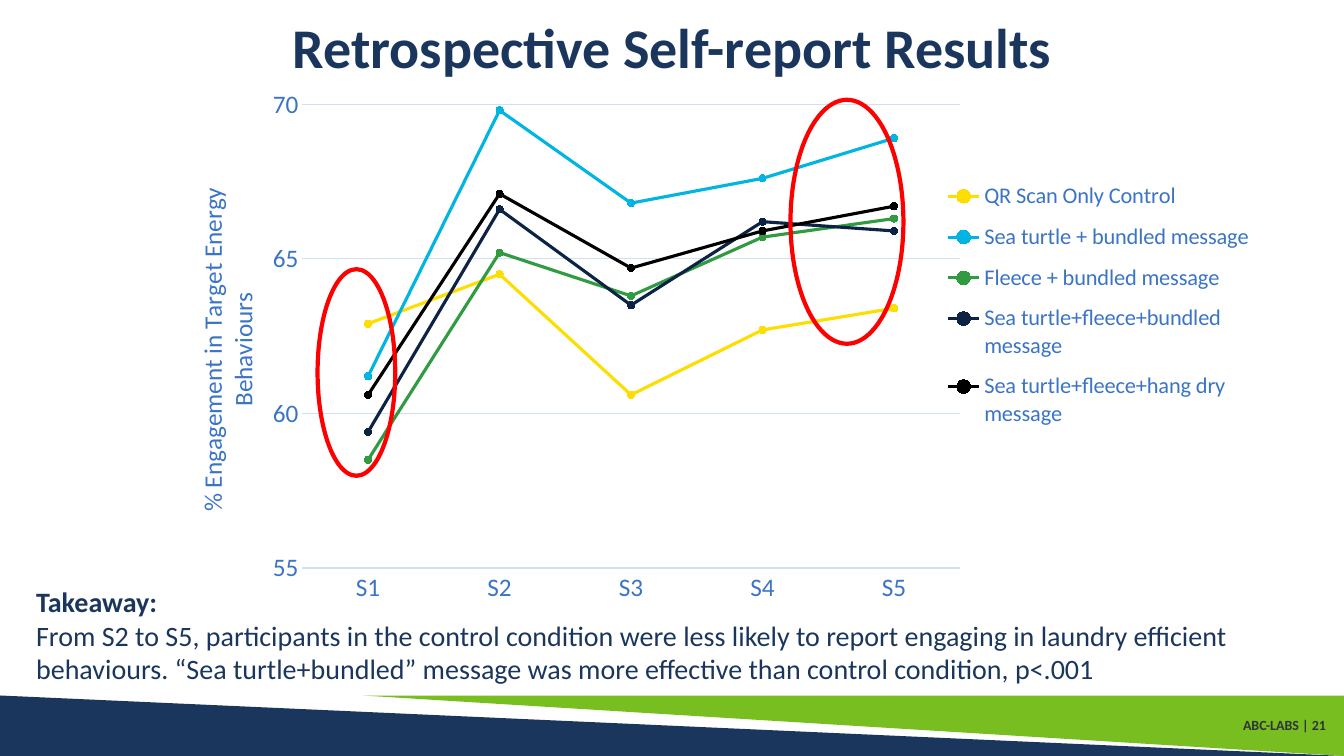
from dataclasses import dataclass

from lxml import etree
from pptx import Presentation
from pptx.chart.data import CategoryChartData
from pptx.dml.color import RGBColor
from pptx.enum.chart import (
    XL_CHART_TYPE as ChartType,
    XL_LEGEND_POSITION as LegendPosition,
    XL_MARKER_STYLE as MarkerStyle,
    XL_TICK_MARK as TickMark,
)
from pptx.enum.shapes import MSO_SHAPE as Preset
from pptx.enum.text import MSO_ANCHOR as Anchor, PP_ALIGN as Align
from pptx.oxml.ns import qn
from pptx.util import Emu, Pt

EMU_PER_PX = 9144  # 100 px to the inch


@dataclass(frozen=True)
class Theme:
    font: str = "Calibri"
    navy: str = "1B365D"
    green: str = "78BE20"
    footer: str = "2E3438"
    axis: str = "3B74C6"
    grid: str = "D2DFF2"
    highlight: str = "FF0000"
    title_size: int = 40
    body_size: int = 20
    axis_size: int = 18
    legend_size: int = 16
    footer_size: int = 10


SESSIONS = ["S1", "S2", "S3", "S4", "S5"]
CONDITIONS = [
    ("QR Scan Only Control", "FEDD00", (62.9, 64.5, 60.6, 62.7, 63.4)),
    ("Sea turtle + bundled message", "00B5E2", (61.2, 69.8, 66.8, 67.6, 68.9)),
    ("Fleece + bundled message", "319B42", (58.5, 65.2, 63.8, 65.7, 66.3)),
    ("Sea turtle+fleece+bundled message", "0C2344", (59.4, 66.6, 63.5, 66.2, 65.9)),
    ("Sea turtle+fleece+hang dry message", "000000", (60.6, 67.1, 64.7, 65.9, 66.7)),
]


def px(*lengths):
    return [Emu(length * EMU_PER_PX) for length in lengths]


def set_format(target, formats):
    for name, value in formats.items():
        setattr(target, name, value)


def set_layout(element, index, **places):
    """Place a chart part by fractions of the chart's size."""
    for old in element.findall(qn("c:layout")):
        element.remove(old)
    layout = etree.Element(qn("c:layout"))
    manual = etree.SubElement(layout, qn("c:manualLayout"))
    if element.tag == qn("c:plotArea"):
        places = {"layoutTarget": "inner", "xMode": "edge", "yMode": "edge", **places}
    else:
        places = {"xMode": "edge", "yMode": "edge", **places}
    for name, value in places.items():
        etree.SubElement(manual, qn(f"c:{name}"), val=str(value))
    element.insert(index, layout)


class SlideBuilder:
    def __init__(self, slide, theme):
        self.slide = slide
        self.theme = theme

    def style_font(self, font, size, color, bold=False):
        set_format(font, {"name": self.theme.font, "size": Pt(size), "bold": bold})
        font.color.rgb = RGBColor.from_string(color)

    def style_line(self, line, color, width):
        line.color.rgb = RGBColor.from_string(color)
        line.width = Pt(width)

    def shape(self, preset, box, fill=None, line=None, rotation=0):
        shape = self.slide.shapes.add_shape(preset, *px(*box))
        shape.shadow.inherit = False
        shape.rotation = rotation
        if fill:
            shape.fill.solid()
            shape.fill.fore_color.rgb = RGBColor.from_string(fill)
        else:
            shape.fill.background()
        if line:
            self.style_line(shape.line, line, 3)
        else:
            shape.line.fill.background()

    def text(self, box, paragraphs, size, color, anchor=Anchor.TOP, **formats):
        """Add a text box; paragraphs are (text, bold) pairs."""
        frame = self.slide.shapes.add_textbox(*px(*box)).text_frame
        set_format(frame, {"word_wrap": True, "vertical_anchor": anchor})
        for index, (text, bold) in enumerate(paragraphs):
            paragraph = frame.add_paragraph() if index else frame.paragraphs[0]
            set_format(paragraph, formats)
            run = paragraph.add_run()
            run.text = text
            self.style_font(run.font, size, color, bold)

    def line_chart(self, box, categories, series_rows, axis_title):
        theme = self.theme
        data = CategoryChartData(number_format="General")
        data.categories = categories
        for name, _, values in series_rows:
            data.add_series(name, values)
        chart = self.slide.shapes.add_chart(ChartType.LINE_MARKERS, *px(*box), data).chart
        set_format(chart, {"has_title": False, "has_legend": True})
        self.style_font(chart.font, theme.axis_size, theme.axis)

        plot = chart.plots[0]
        plot.vary_by_categories = False
        for series, (_, color, _) in zip(plot.series, series_rows):
            series.smooth = False
            self.style_line(series.format.line, color, 2.25)
            marker = series.marker
            set_format(marker, {"style": MarkerStyle.CIRCLE, "size": 5})
            marker.format.fill.solid()
            marker.format.fill.fore_color.rgb = RGBColor.from_string(color)
            self.style_line(marker.format.line, color, 0.75)

        for axis in (chart.category_axis, chart.value_axis):
            set_format(axis, {"major_tick_mark": TickMark.NONE,
                              "minor_tick_mark": TickMark.NONE})
            self.style_font(axis.tick_labels.font, theme.axis_size, theme.axis)
        self.style_line(chart.category_axis.format.line, theme.grid, 0.75)

        value_axis = chart.value_axis
        set_format(value_axis, {"minimum_scale": 55, "maximum_scale": 70,
                                "major_unit": 5, "has_major_gridlines": True})
        value_axis.format.line.fill.background()
        self.style_line(value_axis.major_gridlines.format.line, theme.grid, 0.75)
        paragraph = value_axis.axis_title.text_frame.paragraphs[0]
        run = paragraph.add_run()
        run.text = axis_title
        self.style_font(run.font, theme.axis_size, theme.axis)

        set_format(chart.legend, {"position": LegendPosition.RIGHT,
                                  "include_in_layout": False})
        self.style_font(chart.legend.font, theme.legend_size, theme.axis)

        parts = chart.element.xpath
        set_layout(parts(".//c:plotArea")[0], 0, x=0.124, y=0.048, w=0.574, h=0.87)
        set_layout(parts(".//c:valAx/c:title")[0], 1, x=0.026, y=0.196)
        set_layout(parts(".//c:legend")[0], 1, x=0.679, y=0.17, w=0.28, h=0.51)


def main():
    theme = Theme()
    presentation = Presentation()
    width, height = px(1333, 750)
    set_format(presentation, {"slide_width": width, "slide_height": height})
    slide = presentation.slides.add_slide(presentation.slide_layouts[6])
    builder = SlideBuilder(slide, theme)

    builder.shape(Preset.RIGHT_TRIANGLE, (0, 690, 1333, 60), fill=theme.navy)
    builder.shape(Preset.RIGHT_TRIANGLE, (360, 690, 973, 60), fill=theme.green, rotation=180)
    builder.text((1174, 702, 151, 37), [("ABC-LABS | 21", True)], theme.footer_size,
                 theme.footer, Anchor.MIDDLE, alignment=Align.RIGHT, line_spacing=0.9)
    builder.text((0, 0, 1333, 99), [("Retrospective Self-report Results", True)],
                 theme.title_size, theme.navy, Anchor.MIDDLE,
                 alignment=Align.CENTER, line_spacing=0.9)
    builder.line_chart((159, 78, 1136, 529), SESSIONS, CONDITIONS,
                       "% Engagement in Target Energy Behaviours")
    takeaway = (
        "From S2 to S5, participants in the control condition were less likely to report "
        "engaging in laundry efficient behaviours. “Sea turtle+bundled” message was more "
        "effective than control condition, p<.001"
    )
    builder.text((26, 575, 1314, 111), [("Takeaway:", True), (takeaway, False)],
                 theme.body_size, theme.navy)
    for highlight in ((315, 267, 77, 205), (784, 99, 112, 242)):
        builder.shape(Preset.OVAL, highlight, line=theme.highlight)

    presentation.save("out.pptx")


if __name__ == "__main__":
    main()
